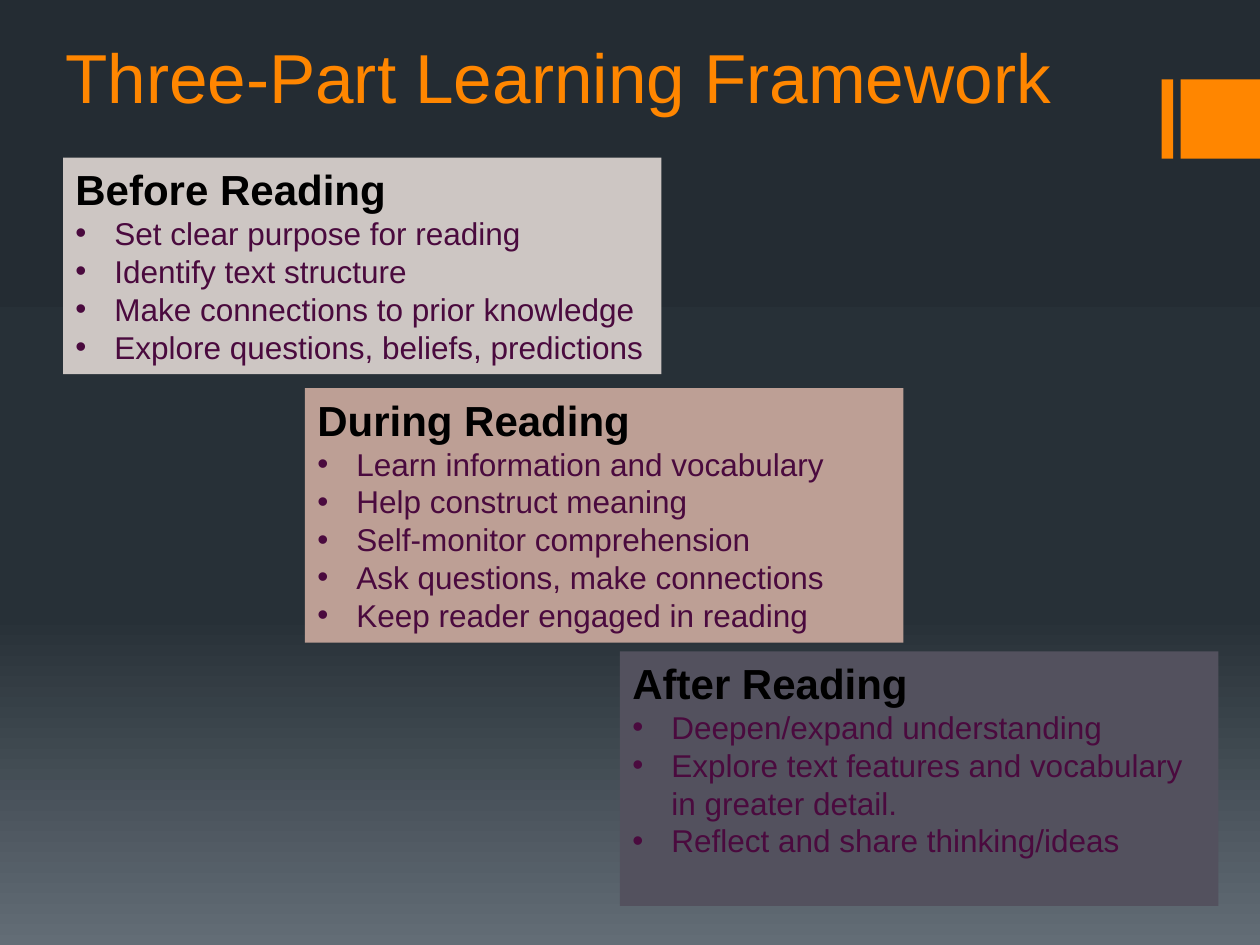
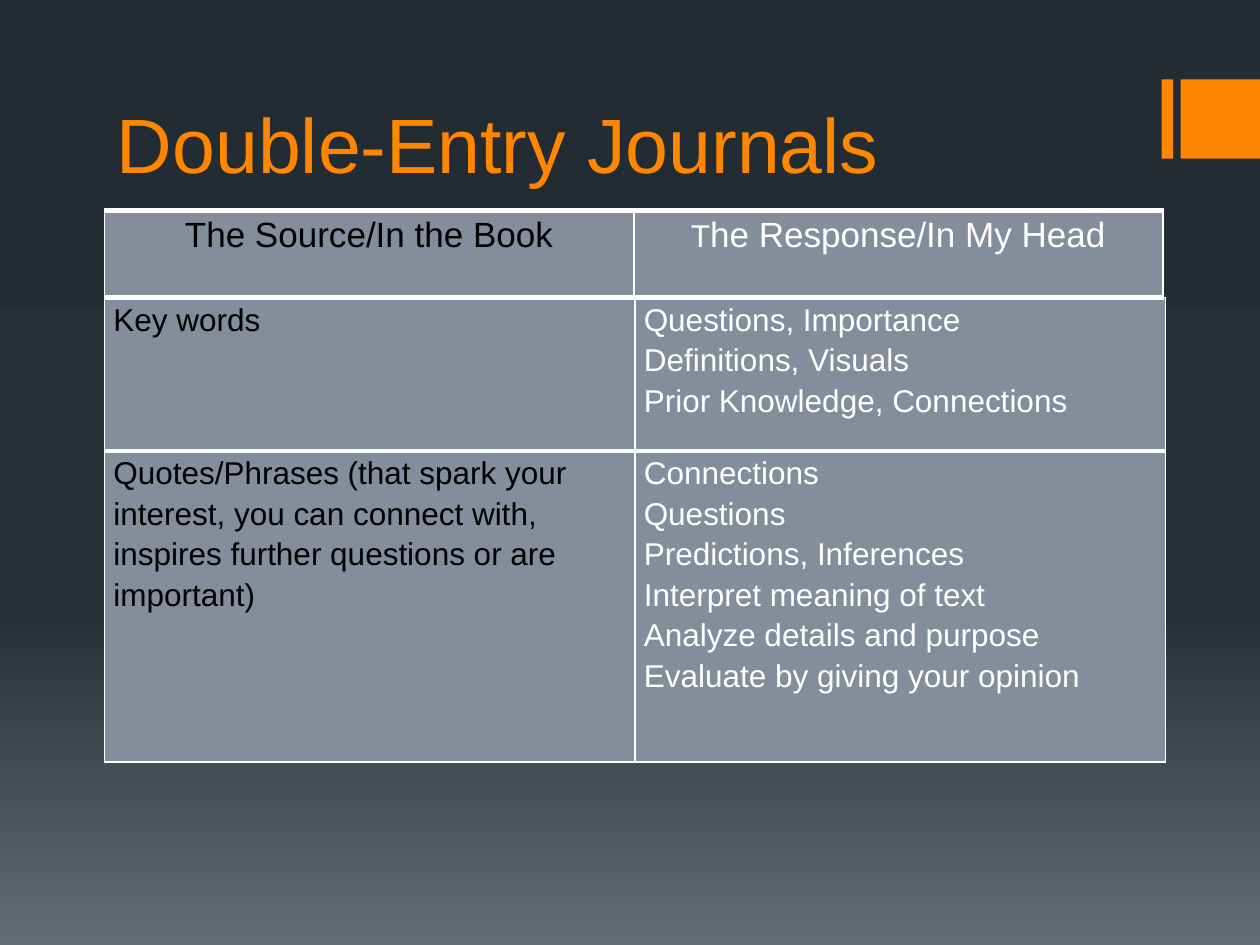
"""Build two slides on reading strategies."""
from copy import deepcopy
from dataclasses import dataclass

from lxml import etree
from pptx import Presentation
from pptx.dml.color import RGBColor
from pptx.enum.shapes import MSO_SHAPE
from pptx.enum.text import MSO_ANCHOR, PP_ALIGN
from pptx.oxml.ns import qn
from pptx.util import Inches, Pt

RECT = MSO_SHAPE.RECTANGLE
TOP, BOTTOM = MSO_ANCHOR.TOP, MSO_ANCHOR.BOTTOM
LEFT, CENTER = PP_ALIGN.LEFT, PP_ALIGN.CENTER


@dataclass(frozen=True)
class Theme:
    font: str = "Arial"
    accent: str = "FF8600"
    black: str = "000000"
    white: str = "FFFFFF"
    plum: str = "4A0A3E"
    cell: str = "838D9B"
    back: tuple = ((0, "242C33"), (0.65, "273037"), (1, "636D76"))
    head: float = 24
    body: float = 18
    label: float = 20
    thin: float = 1
    thick: float = 3


@dataclass(frozen=True)
class Run:
    text: str
    size: float
    color: str
    bold: bool = False


@dataclass(frozen=True)
class Panel:
    left: float
    top: float
    high: float
    fill: str
    head: str
    items: tuple


@dataclass(frozen=True)
class Row:
    high: float
    cells: tuple
    upper: float
    lower: float
    align: PP_ALIGN = LEFT


THEME = Theme()

PANELS = (
    Panel(0.5, 1.25, 1.72, "CDC6C3", "Before Reading", (
        "Set clear purpose for reading",
        "Identify text structure",
        "Make connections to prior knowledge",
        "Explore questions, beliefs, predictions")),
    Panel(2.42, 3.08, 2.02, "BD9F95", "During Reading", (
        "Learn information and vocabulary",
        "Help construct meaning",
        "Self-monitor comprehension",
        "Ask questions, make connections",
        "Keep reader engaged in reading")),
    Panel(4.92, 5.17, 2.02, "53515E", "After Reading", (
        "Deepen/expand understanding",
        "Explore text features and vocabulary in greater detail.",
        "Reflect and share thinking/ideas")),
)


def lines(color: str, *texts: str) -> tuple:
    """Make one body run per line of a cell."""
    return tuple((Run(text, THEME.body, color),) for text in texts)


HEADER = (
    Row(0.69, (
        ((Run("The Source/In the Book", THEME.label, THEME.black),),),
        ((Run("T", THEME.body, THEME.white),
          Run("he Response/In My Head", THEME.label, THEME.white)),),
    ), THEME.thick, THEME.thick, CENTER),
)
ENTRIES = (
    Row(1.22, (
        lines(THEME.black, "Key words"),
        lines(THEME.white, "Questions, Importance", "Definitions, Visuals",
              "Prior Knowledge, Connections"),
    ), THEME.thin, THEME.thick),
    Row(2.47, (
        lines(THEME.black, "Quotes/Phrases (that spark your interest, you can connect "
              "with, inspires further questions or are important)"),
        lines(THEME.white, "Connections", "Questions", "Predictions, Inferences",
              "Interpret meaning of text", "Analyze details and purpose",
              "Evaluate by giving your opinion"),
    ), THEME.thick, THEME.thin),
)


def rgb(code: str) -> RGBColor:
    """Turn a hex code into a colour."""
    return RGBColor.from_string(code)


def add_run(para, run: Run) -> None:
    """Add one styled run to a paragraph."""
    part = para.add_run()
    part.text = run.text
    part.font.name = THEME.font
    part.font.size = Pt(run.size)
    part.font.bold = run.bold
    part.font.color.rgb = rgb(run.color)


def add_para(frame, index: int, runs: tuple, align: PP_ALIGN = LEFT):
    """Fill the first paragraph or add a further one."""
    para = frame.add_paragraph() if index else frame.paragraphs[0]
    para.alignment = align
    for run in runs:
        add_run(para, run)
    return para


def add_bullet(para) -> None:
    """Give a paragraph a hanging bullet."""
    props = para._p.get_or_add_pPr()
    props.set("marL", str(Inches(0.31)))
    props.set("indent", str(-Inches(0.31)))
    etree.SubElement(props, qn("a:buFont")).set("typeface", THEME.font)
    etree.SubElement(props, qn("a:buChar")).set("char", "•")


def add_box(slide, left: float, top: float, wide: float, high: float, fill: str):
    """Draw a flat filled box."""
    box = slide.shapes.add_shape(RECT, Inches(left), Inches(top), Inches(wide), Inches(high))
    box.shadow.inherit = False
    box.fill.solid()
    box.fill.fore_color.rgb = rgb(fill)
    box.line.fill.background()
    return box


def set_back(master) -> None:
    """Give all slides the dark gradient."""
    fill = master.background.fill
    fill.gradient()
    fill.gradient_angle = 270
    stops = master.element.find(".//" + qn("a:gsLst"))
    stops.append(deepcopy(stops[-1]))
    for stop, (place, color) in zip(fill.gradient_stops, THEME.back):
        stop.position = place
        stop.color.rgb = rgb(color)


def add_slide(deck, title: str, size: float, left: float, top: float, wide: float,
              inset: float = 0.05):
    """Start a slide with its accent blocks and title."""
    slide = deck.slides.add_slide(deck.slide_layouts[6])
    for edge, width in ((9.22, 0.09), (9.37, 0.63)):
        add_box(slide, edge, 0.63, width, 0.63, THEME.accent)
    box = slide.shapes.add_textbox(Inches(left), Inches(top), Inches(wide), Inches(1.25))
    frame = box.text_frame
    frame.word_wrap = True
    frame.vertical_anchor = BOTTOM
    frame.margin_bottom = Inches(inset)
    add_para(frame, 0, (Run(title, size, THEME.accent),))
    return slide


def add_panel(slide, panel: Panel) -> None:
    """Draw a panel with a heading and bullets."""
    frame = add_box(slide, panel.left, panel.top, 4.75, panel.high, panel.fill).text_frame
    frame.word_wrap = True
    frame.vertical_anchor = TOP
    add_para(frame, 0, (Run(panel.head, THEME.head, THEME.black, True),))
    for index, item in enumerate(panel.items, 1):
        add_bullet(add_para(frame, index, (Run(item, THEME.body, THEME.plum),)))


def set_edges(cell, row: Row) -> None:
    """Draw the white borders of a cell."""
    props = cell._tc.get_or_add_tcPr()
    edges = (("L", THEME.thin), ("R", THEME.thin), ("T", row.upper), ("B", row.lower))
    for index, (side, width) in enumerate(edges):
        line = etree.Element(qn(f"a:ln{side}"), w=str(Pt(width)))
        fill = etree.SubElement(line, qn("a:solidFill"))
        etree.SubElement(fill, qn("a:srgbClr")).set("val", THEME.white)
        props.insert(index, line)


def fill_cell(cell, paras: tuple, row: Row) -> None:
    """Fill a cell with text, colour and borders."""
    cell.fill.solid()
    cell.fill.fore_color.rgb = rgb(THEME.cell)
    cell.margin_left = cell.margin_right = Inches(0.07)
    cell.margin_top = cell.margin_bottom = 0
    for index, runs in enumerate(paras):
        add_para(cell.text_frame, index, runs, row.align).line_spacing = 1.15
    set_edges(cell, row)


def add_grid(slide, top: float, wide: float, rows: tuple) -> None:
    """Draw a table of two equal columns."""
    high = sum(row.high for row in rows)
    grid = slide.shapes.add_table(
        len(rows), 2, Inches(0.83), Inches(top), Inches(wide), Inches(high)).table
    grid.first_row = grid.horz_banding = False
    for index, row in enumerate(rows):
        grid.rows[index].height = Inches(row.high)
        for col, paras in enumerate(row.cells):
            fill_cell(grid.cell(index, col), paras, row)


def main() -> None:
    """Build and save the deck."""
    deck = Presentation()
    deck.slide_width, deck.slide_height = Inches(10), Inches(7.5)
    set_back(deck.slide_master)

    frame = add_slide(deck, "Three-Part Learning Framework", 39.6, 0.42, 0.33, 9, 0.65)
    for panel in PANELS:
        add_panel(frame, panel)

    journal = add_slide(deck, "Double-Entry Journals", 44, 0.83, 0.3, 8.67)
    add_grid(journal, 2.36, 8.42, ENTRIES)
    add_grid(journal, 1.67, 8.4, HEADER)

    deck.save("out.pptx")


if __name__ == "__main__":
    main()
